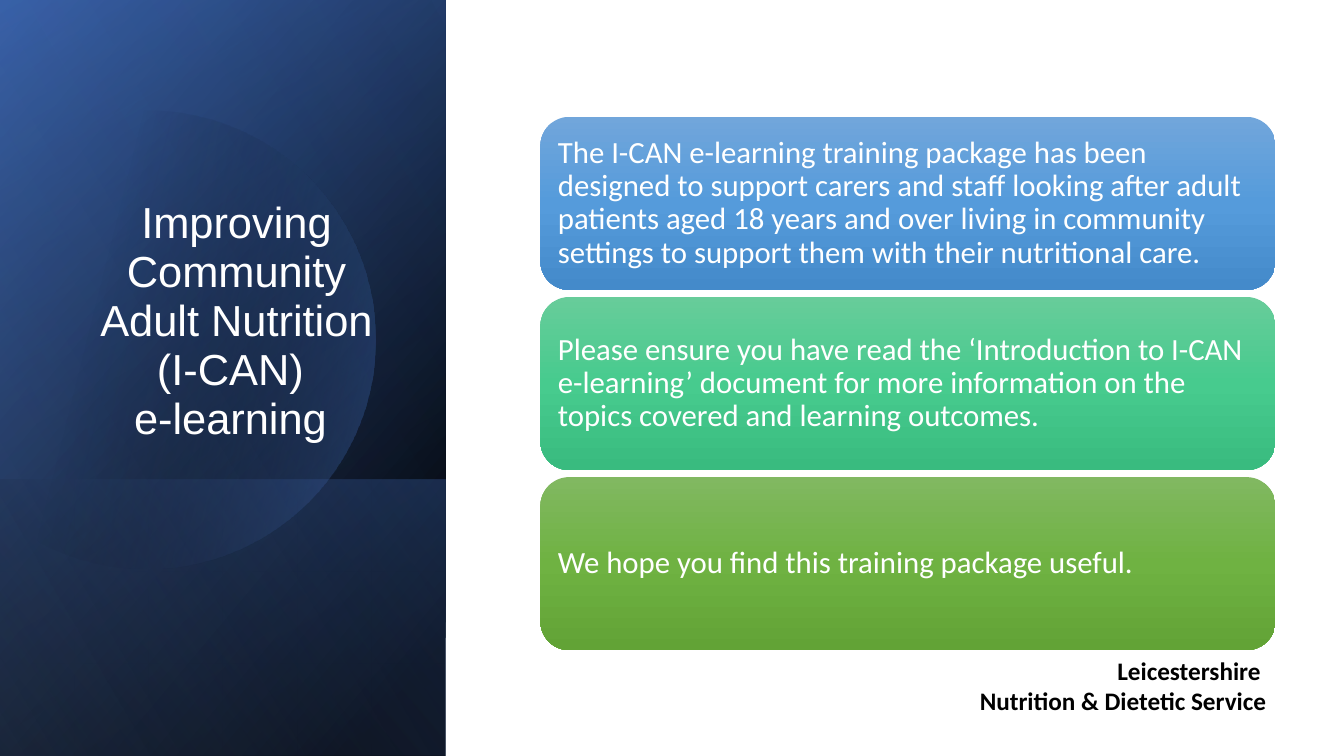
import math
from dataclasses import dataclass

from lxml import etree
from pptx import Presentation
from pptx import util as u
from pptx.dml.color import RGBColor
from pptx.enum import shapes, text
from pptx.oxml import ns


@dataclass(frozen=True)
class Theme:
    light: str = "FFFFFF"
    dark: str = "000000"
    blue: str = "4472C4"
    deep_blue: str = "2F5597"
    pale_blue: str = "8FAADC"
    cards: tuple = (
        ("71A6DB", "559BDB", "448ACA"),
        ("67CC9A", "47CB8E", "39BB7F"),
        ("81B861", "6FB242", "62A336"),
    )
    title_font: str = "Arial"
    body_font: str = "Calibri"
    title_size: int = 31
    body_size: int = 22
    footer_size: int = 18


T = Theme()

MESSAGES = (
    "The I-CAN e-learning training package has been designed to support carers "
    "and staff looking after adult patients aged 18 years and over living in "
    "community settings to support them with their nutritional care.",
    "Please ensure you have read the ‘Introduction to I-CAN e-learning’ document "
    "for more information on the topics covered and learning outcomes.",
    "We hope you find this training package useful.",
)


def inches(*values):
    return [u.Inches(v) for v in values]


def fill_gradient(sp, stops, angle):
    sp.shadow.inherit = False
    sp.line.fill.background()
    sp.fill.gradient()
    sp.fill.gradient_angle = 360 - angle
    stop_list = sp.element.spPr.find(".//" + ns.qn("a:gsLst"))
    for old in list(stop_list):
        stop_list.remove(old)
    for position, color, opacity in stops:
        stop = etree.SubElement(stop_list, ns.qn("a:gs"), pos=str(position * 1000))
        rgb = etree.SubElement(stop, ns.qn("a:srgbClr"), val=color)
        if opacity < 100:
            etree.SubElement(rgb, ns.qn("a:alpha"), val=str(opacity * 1000))


def write(sp, *lines, font, size, color, bold=False, align=text.PP_ALIGN.LEFT,
          anchor=text.MSO_ANCHOR.TOP, spacing=None, inset=None):
    tf = sp.text_frame
    tf.word_wrap = True
    tf.auto_size = text.MSO_AUTO_SIZE.NONE
    tf.vertical_anchor = anchor
    if inset is not None:
        tf.margin_left = tf.margin_right = u.Inches(inset)
        tf.margin_top = tf.margin_bottom = u.Inches(inset)
    tf.text = "\n".join(lines)
    for p in tf.paragraphs:
        p.alignment = align
        p.line_spacing = spacing
        for r in p.runs:
            r.font.name = font
            r.font.size = u.Pt(size)
            r.font.bold = bold
            r.font.color.rgb = RGBColor.from_string(color)


def add_turned_layer(s, box, stops, angle):
    x, y, w, h = box
    sp = s.shapes.add_shape(
        shapes.MSO_SHAPE.RECTANGLE,
        *inches(x + (w - h) / 2, y + (h - w) / 2, h, w))
    sp.rotation = 90
    sp.element.spPr.get_or_add_xfrm().set("flipH", "1")
    fill_gradient(sp, stops, angle)


def add_cut_circle(s, box):
    x, y, w, h = box
    radius = 2.27
    cx, cy = x + 1.45, y + 3.37
    limit = math.acos((x - cx) / radius)
    steps = 120
    angles = [limit * (2 * i / steps - 1) for i in range(steps + 1)]
    points = [tuple(inches(cx + radius * math.cos(a), cy + radius * math.sin(a)))
              for a in angles]
    builder = s.shapes.build_freeform(*points[0])
    builder.add_line_segments(points[1:], close=True)
    fill_gradient(builder.convert_to_shape(),
                  ((29, T.dark, 0), (100, T.blue, 43)), 14)


def add_title_panel(s, box):
    x, y, w, h = box
    band = 2.74
    add_turned_layer(s, box, ((8, T.dark, 100), (100, T.deep_blue, 100)), 50)
    add_turned_layer(s, box, ((0, T.dark, 0), (99, T.blue, 46)), 30)
    add_turned_layer(s, (x, y + h - band, w, band),
                     ((2, T.blue, 29), (100, T.dark, 30)), 130)
    add_cut_circle(s, box)
    add_turned_layer(s, box, ((0, T.dark, 0), (99, T.pale_blue, 11)), 120)

    title = s.shapes.title
    title.element.getparent().append(title.element)
    title.left, title.top, title.width, title.height = inches(
        x + 0.64, y + 1.84, 3.41, 2.62)
    write(title, "Improving Community Adult Nutrition (I-CAN) \ve-learning ",
          font=T.title_font, size=T.title_size, color=T.light,
          align=text.PP_ALIGN.CENTER, anchor=text.MSO_ANCHOR.BOTTOM, spacing=0.94)


def add_cards(s, box):
    x, y, w, h = box
    gap = 0.07
    card_h = (h - gap * (len(MESSAGES) - 1)) / len(MESSAGES)
    for i, (message, colors) in enumerate(zip(MESSAGES, T.cards)):
        card = s.shapes.add_shape(
            shapes.MSO_SHAPE.ROUNDED_RECTANGLE,
            *inches(x, y + i * (card_h + gap), w, card_h))
        fill_gradient(card, [(50 * n, c, 100) for n, c in enumerate(colors)], 90)
        write(card, message, font=T.body_font, size=T.body_size, color=T.light,
              anchor=text.MSO_ANCHOR.MIDDLE, spacing=0.9, inset=0.09)


def add_footer(s, box):
    write(s.shapes.add_textbox(*inches(*box)),
          "Leicestershire ", "Nutrition & Dietetic Service",
          font=T.body_font, size=T.footer_size, color=T.dark, bold=True,
          align=text.PP_ALIGN.RIGHT)


def main():
    prs = Presentation()
    prs.slide_width, prs.slide_height = inches(13.33, 7.5)
    s = prs.slides.add_slide(prs.slide_layouts[5])
    add_title_panel(s, (0, 0, 4.42, 7.5))
    add_cards(s, (5.36, 1.16, 7.29, 5.29))
    add_footer(s, (4.43, 6.45, 8.23, 0.71))
    prs.save("out.pptx")


if __name__ == "__main__":
    main()
